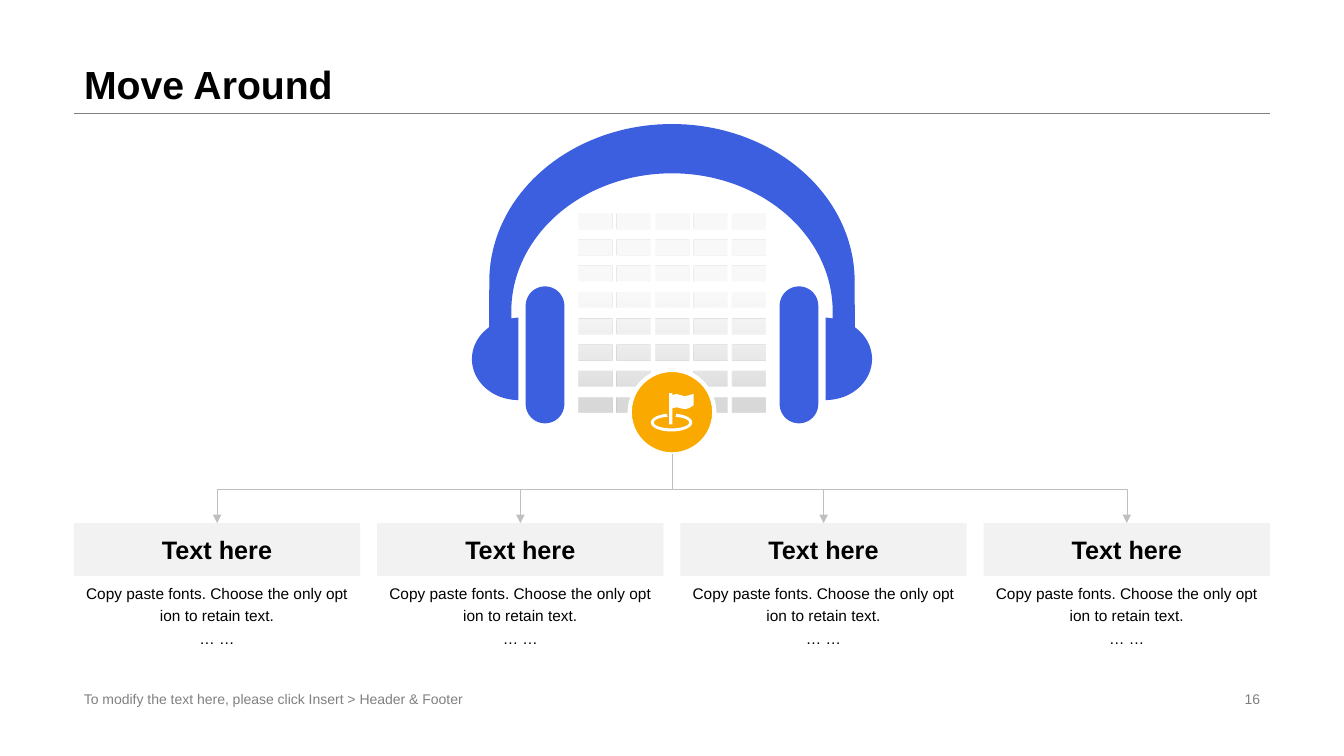
from math import cos, radians, sin

from lxml.etree import SubElement
from pptx import Presentation
from pptx.dml.color import RGBColor
from pptx.enum.shapes import MSO_CONNECTOR, MSO_SHAPE
from pptx.enum.text import MSO_ANCHOR, MSO_AUTO_SIZE, PP_ALIGN
from pptx.oxml.ns import qn
from pptx.util import Pt

COLORS = {
    "text": "000000",
    "muted": "808080",
    "blue": "3B5FDE",
    "orange": "FAA900",
    "white": "FFFFFF",
    "card": "F2F2F2",
    "window": "D9D9D9",
    "arrow": "BFBFBF",
}
CENTER = 480
LEFT, WIDTH = 52.8, 854.4
CARD_WIDTH, CARD_PITCH, CARD_TOP, CARD_HEIGHT = 204.5, 216.6, 373.6, 38
BODY = ["Copy paste fonts. Choose the only opt ion to retain text.", "… …"]


def color(name):
    return RGBColor.from_string(COLORS[name])


def write(shape, *lines, size=11, tone="text", bold=False, align=PP_ALIGN.LEFT,
          anchor=MSO_ANCHOR.MIDDLE, spacing=1.0):
    """Fill the shape with one paragraph per line of text."""
    frame = shape.text_frame
    frame.word_wrap = True
    frame.auto_size = MSO_AUTO_SIZE.NONE
    frame.vertical_anchor = anchor
    frame.text = "\n".join(lines)
    for paragraph in frame.paragraphs:
        paragraph.alignment = align
        paragraph.line_spacing = spacing
        font = paragraph.runs[0].font
        font.name, font.size, font.bold = "Arial", Pt(size), bold
        font.color.rgb = color(tone)


def arc(x, y, radius_x, radius_y, start, end, steps=40):
    """Points on an ellipse; angles in degrees, clockwise from the right."""
    angles = [radians(start + (end - start) * i / steps) for i in range(steps + 1)]
    return [(x + radius_x * cos(a), y + radius_y * sin(a)) for a in angles]


def mirrored(points):
    return [(2 * CENTER - x, y) for x, y in reversed(points)]


def box(left, top, width, height):
    right, bottom = left + width, top + height
    return [(left, top), (right, top), (right, bottom), (left, bottom)]


def headphone_outlines():
    half_band = [
        *arc(CENTER, 201, 130.5, 112.4, -90, 0),
        *arc(589.7, 256.5, 33.2, 29.3, -51, 90),
        (589.7, 226.8), (594.8, 227.5),
        *arc(CENTER, 222.5, 114.8, 98.7, 0, -90),
    ]
    pad = arc(570.7, 218.4, 13.8, 13.8, 180, 360) + arc(570.7, 288.6, 13.8, 13.8, 0, 180)
    return [half_band + mirrored(half_band), pad, mirrored(pad)]


def flag_outlines():
    ring = arc(479.7, 301.8, 14.8, 6.4, -77, 257) + arc(479.7, 301.8, 12.6, 4.2, 257, -77)
    flag = [
        (478, 280.8), (480.4, 280.8), (480.4, 282.2), (483.3, 281.4), (486, 282.2),
        (489, 283), (492, 282.4), (495.4, 281.3), (495.4, 289.6), (492, 291.6),
        (489, 292.3), (486, 291.6), (483.3, 290.9), (480.4, 291.6),
        (480.4, 303.2), (478, 303.2),
    ]
    return [ring, flag]


class SlideBuilder:
    """Holds the current slide and draws its elements in points."""

    def __init__(self, presentation):
        self.slide = presentation.slides.add_slide(presentation.slide_layouts[5])
        self.shapes = self.slide.shapes

    def title(self, text):
        title = self.shapes.title
        title.left, title.top, title.width, title.height = (
            Pt(LEFT), Pt(0), Pt(WIDTH), Pt(80.6))
        write(title, text, size=28, bold=True, anchor=MSO_ANCHOR.BOTTOM, spacing=0.9)

    def text(self, left, top, width, height, *lines, **text_format):
        write(self.shapes.add_textbox(Pt(left), Pt(top), Pt(width), Pt(height)),
              *lines, **text_format)

    def finish(self, shape, fill, line=None):
        shape.shadow.inherit = False
        shape.fill.solid()
        shape.fill.fore_color.rgb = color(fill)
        if line:
            shape.line.color.rgb = color(line)
            shape.line.width = Pt(3)
        else:
            shape.line.fill.background()
        return shape

    def preset(self, kind, left, top, width, height, fill, line=None):
        shape = self.shapes.add_shape(kind, Pt(left), Pt(top), Pt(width), Pt(height))
        return self.finish(shape, fill, line)

    def outline(self, outlines, fill):
        """One freeform made of several closed outlines."""
        first, *others = [[(Pt(x), Pt(y)) for x, y in points] for points in outlines]
        builder = self.shapes.build_freeform(*first[0])
        builder.add_line_segments(first[1:])
        for points in others:
            builder.move_to(*points[0])
            builder.add_line_segments(points[1:])
        return self.finish(builder.convert_to_shape(), fill)

    def connector(self, kind, start, end, tone):
        connector = self.shapes.add_connector(kind, *(Pt(v) for v in (*start, *end)))
        connector.line.color.rgb = color(tone)
        connector.line.width = Pt(0.25)
        SubElement(connector.element.spPr, qn("a:effectLst"))
        return connector

    def branch(self, x, top, bottom):
        """Elbow arrow that leaves the centre downwards and ends above x."""
        middle_x, middle_y = (CENTER + x) / 2, (top + bottom) / 2
        half_drop, half_reach = (bottom - top) / 2, abs(x - CENTER) / 2
        connector = self.connector(
            MSO_CONNECTOR.ELBOW,
            (middle_x - half_drop, middle_y - half_reach),
            (middle_x + half_drop, middle_y + half_reach), "arrow")
        transform = connector.element.xpath(".//a:xfrm")[0]
        transform.set("rot", str((90 if x < CENTER else 270) * 60000))
        if x > CENTER:
            transform.set("flipH", "1")
        line = connector.element.xpath(".//a:ln")[0]
        SubElement(line, qn("a:tailEnd"), type="triangle")

    def windows(self):
        cells = [box(413 + 27.3 * column, 152.6 + 18.65 * row, 24.3, 11.2)
                 for row in range(8) for column in range(5)]
        shape = self.outline(cells, "window")
        shape.fill.gradient()
        shape.fill.gradient_angle = 90
        stops = shape.fill.gradient_stops
        for stop, position, tone in zip(stops, (0.05, 0.58), ("window", "card")):
            stop.position = position
            stop.color.rgb = color(tone)
        pale = shape.element.xpath(".//a:gs/a:srgbClr")[1]
        SubElement(pale, qn("a:alpha"), val="47000")

    def card(self, center, heading, lines):
        left = center - CARD_WIDTH / 2
        header = self.preset(MSO_SHAPE.RECTANGLE, left, CARD_TOP, CARD_WIDTH,
                             CARD_HEIGHT, "card")
        write(header, heading, size=18, bold=True, align=PP_ALIGN.CENTER)
        self.text(left, CARD_TOP + CARD_HEIGHT - 0.4, CARD_WIDTH, 72.6, *lines,
                  align=PP_ALIGN.CENTER, anchor=MSO_ANCHOR.TOP, spacing=1.2)


def main():
    presentation = Presentation()
    presentation.slide_width, presentation.slide_height = Pt(960), Pt(540)
    builder = SlideBuilder(presentation)

    builder.connector(MSO_CONNECTOR.STRAIGHT, (LEFT, 80.8), (LEFT + WIDTH, 80.8), "muted")
    builder.title("Move Around")
    builder.text(LEFT, 491, 326, 16.6, size=10, tone="muted",
                 *["To modify the text here, please click Insert > Header & Footer"])
    builder.text(678.2, 491, 229, 16.6, "16", size=10, tone="muted",
                 align=PP_ALIGN.RIGHT)

    builder.outline(headphone_outlines(), "blue")
    builder.windows()
    builder.preset(MSO_SHAPE.OVAL, CENTER - 30.2, 264.2, 60.4, 60.4, "orange", "white")
    builder.outline(flag_outlines(), "white")

    centers = [CENTER + CARD_PITCH * (i - 1.5) for i in range(4)]
    for center in centers:
        builder.card(center, "Text here", BODY)
    for center in centers:
        builder.branch(center, 324.6, CARD_TOP)

    presentation.save("out.pptx")


if __name__ == "__main__":
    main()
